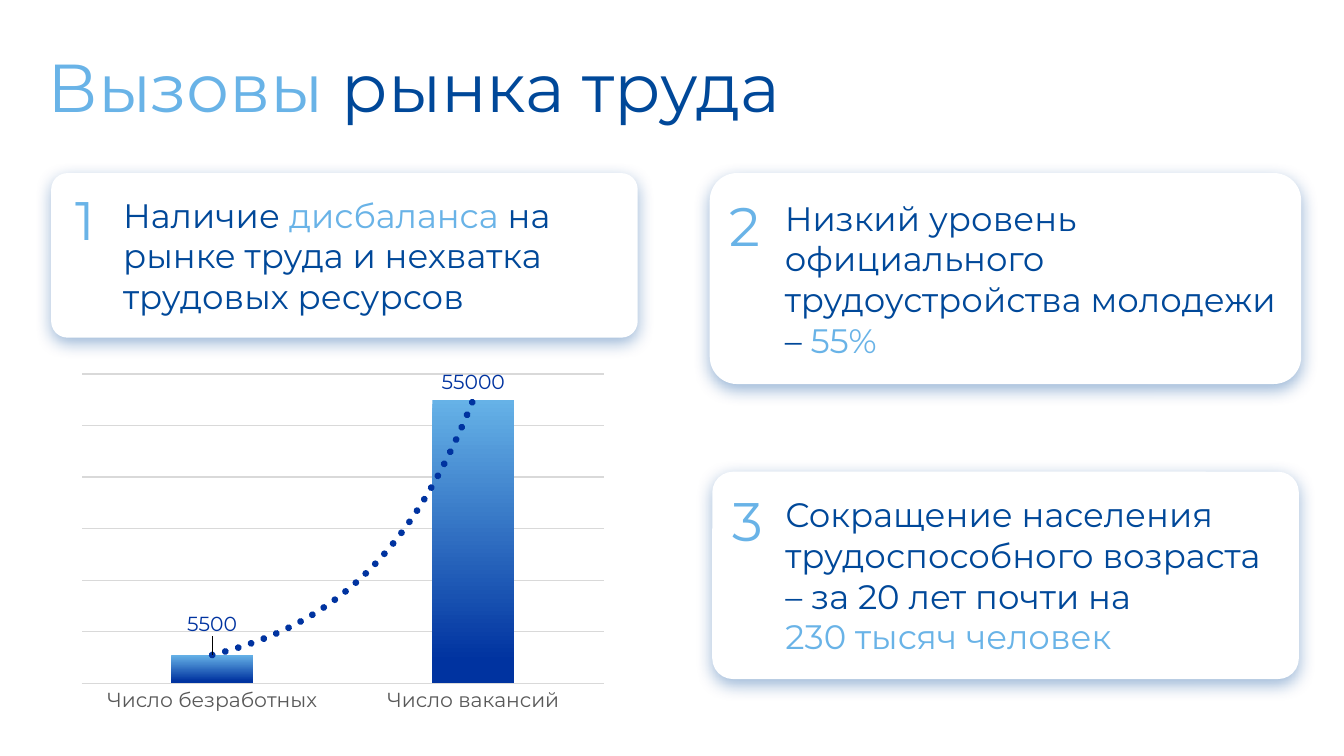
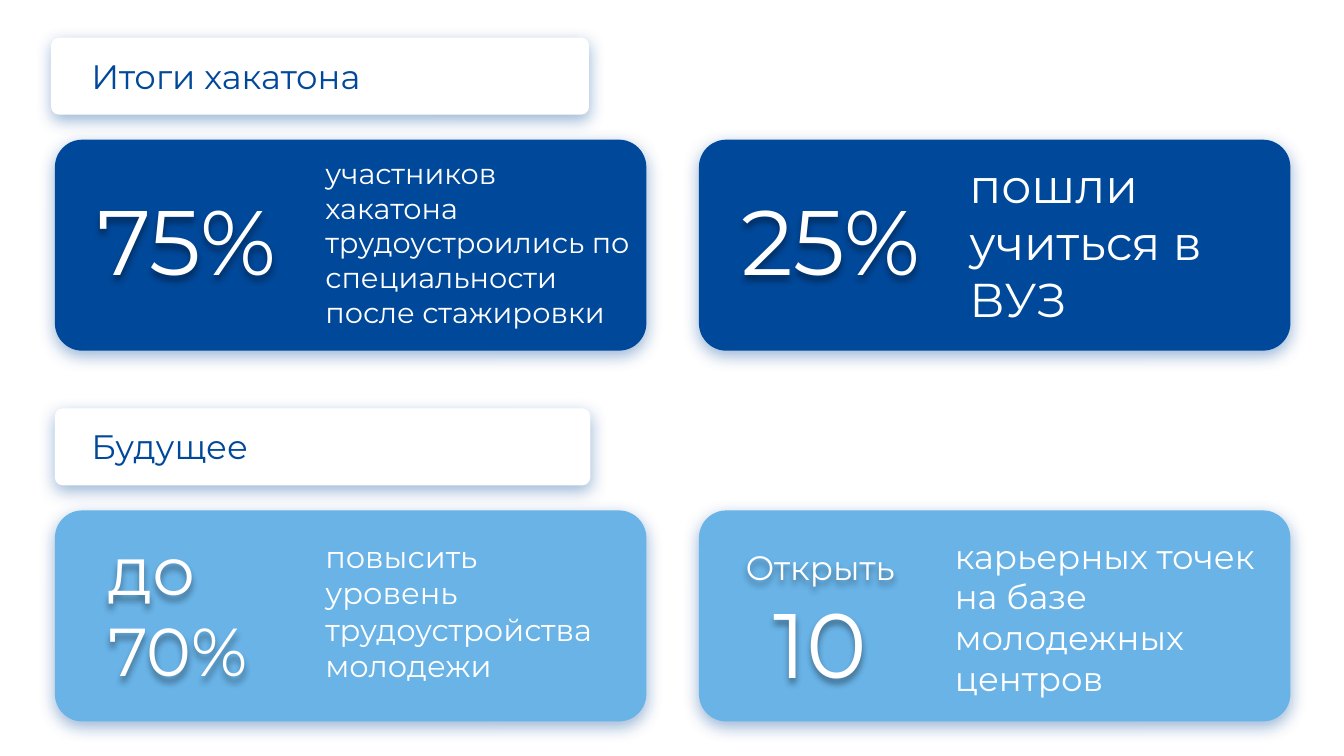
import lxml.etree
import pptx
import pptx.chart.data
import pptx.dml.color
import pptx.enum.chart
import pptx.enum.dml
import pptx.enum.shapes
import pptx.enum.text
import pptx.oxml
import pptx.oxml.ns
import pptx.util

Pt = pptx.util.Pt
qn = pptx.oxml.ns.qn
RGB = pptx.dml.color.RGBColor.from_string
ANCHOR = pptx.enum.text.MSO_ANCHOR
ALIGN = pptx.enum.text.PP_ALIGN
FONT = "Montserrat"
COLOURS = {
    "navy": "004899",
    "sky": "69B3E7",
    "white": "FFFFFF",
    "black": "000000",
    "bar_top": "66B2E7",
    "bar_bottom": "0033A0",
    "grid": "D9D9D9",
    "label": "595959",
}
SHADOW = (
    '<a:outerShdw %s blurRad="%d" dist="%d" dir="5400000" algn="t" rotWithShape="0">'
    '<a:srgbClr val="%s"><a:alpha val="40000"/></a:srgbClr></a:outerShdw>'
)


def add_box(shapes, place, fill=None, radius=0.1, shadow=None):
    lengths = [Pt(value) for value in place]
    if fill:
        kind = pptx.enum.shapes.MSO_SHAPE.ROUNDED_RECTANGLE
        box = shapes.add_shape(kind, *lengths)
        box.adjustments[0] = radius
        box.fill.solid()
        box.fill.fore_color.rgb = RGB(COLOURS[fill])
        box.line.fill.background()
    else:
        box = shapes.add_textbox(*lengths)
    box.shadow.inherit = False
    if shadow:
        blur = Pt(10) if fill else Pt(4)
        xml = SHADOW % (pptx.oxml.ns.nsdecls("a"), blur, Pt(3), COLOURS[shadow])
        effects = box._element.spPr.find(qn("a:effectLst"))
        effects.append(pptx.oxml.parse_xml(xml))
    return box


def write_text(box, paragraphs, size=20, align=ALIGN.LEFT, anchor=ANCHOR.TOP,
               insets=(7.2, 3.6, 7.2, 3.6), wrap=True):
    frame = box.text_frame
    frame.word_wrap = wrap
    frame.vertical_anchor = anchor
    frame.margin_left, frame.margin_top, frame.margin_right, frame.margin_bottom = map(Pt, insets)
    for index, runs in enumerate(paragraphs):
        para = frame.add_paragraph() if index else frame.paragraphs[0]
        para.alignment = align
        for text, colour, *own_size in runs:
            span = para.add_run()
            span.text = text
            span.font.name = FONT
            span.font.size = Pt(own_size[0] if own_size else size)
            span.font.color.rgb = RGB(COLOURS[colour])


deck = pptx.Presentation()
deck.slide_width, deck.slide_height = Pt(793.44), Pt(446.4)
blank = deck.slide_layouts[6]

page = deck.slides.add_slide(blank)
title = add_box(page.shapes, (20.9, 23, 656.6, 55.4))
write_text(title, [[("Вызовы", "sky"), (" рынка труда", "navy")]], size=40)

challenges = [
    ((30.2, 102.2, 346.3, 97.2), 0.1, (37.4, 106.6, 27.4, 47.5),
     [[("Наличие ", "navy"), ("дисбаланса", "sky"),
       (" на рынке труда и нехватка трудовых ресурсов", "navy")]]),
    ((419, 102.2, 349.2, 124.6), 0.13, (423.4, 110.2, 31.7, 47.5),
     [[("Низкий уровень официального трудоустройства молодежи – ", "navy"), ("55%", "sky")]]),
    ((420.5, 278.6, 346.3, 122.4), 0.1, (425.5, 284.4, 33.8, 47.5),
     [[("Сокращение населения трудоспособного возраста – за 20 лет почти на", "navy")],
      [("230 тысяч человек", "sky")]]),
]
for number, (place, radius, number_place, paragraphs) in enumerate(challenges, 1):
    card = add_box(page.shapes, place, fill="white", radius=radius, shadow="navy")
    write_text(card, paragraphs, anchor=ANCHOR.MIDDLE, insets=(39.6, 9.4, 5, 9.4))
    badge = add_box(page.shapes, number_place)
    write_text(badge, [[(str(number), "sky")]], size=32, wrap=False)

jobs = pptx.chart.data.CategoryChartData()
jobs.categories = ["Число безработных", "Число вакансий"]
jobs.add_series("Series 1", (5500, 55000))
chart = page.shapes.add_chart(
    pptx.enum.chart.XL_CHART_TYPE.COLUMN_CLUSTERED,
    Pt(41.8), Pt(216.7), Pt(321.1), Pt(208.1), jobs).chart
chart.has_legend = False
chart.has_title = False
chart.font.name = FONT
chart.font.size = Pt(12)
chart.font.color.rgb = RGB(COLOURS["label"])

values = chart.value_axis
values.minimum_scale, values.maximum_scale, values.major_unit = 0, 60000, 10000
values.visible = False
values.has_major_gridlines = True
names = chart.category_axis
names.major_tick_mark = pptx.enum.chart.XL_TICK_MARK.NONE
for line in (values.major_gridlines.format.line, names.format.line):
    line.color.rgb = RGB(COLOURS["grid"])
    line.width = Pt(0.75)

plot = chart.plots[0]
plot.gap_width, plot.overlap = 219, -27
plot.vary_by_categories = False
series = plot.series[0]
fill = series.format.fill
fill.gradient()
fill.gradient_angle = 270
for stop, position, colour in zip(fill.gradient_stops, (0, 0.92), ("bar_top", "bar_bottom")):
    stop.position = position
    stop.color.rgb = RGB(COLOURS[colour])

labels = series.data_labels
labels.show_value = True
first_label = series.points[0].data_label
for label in (labels, first_label):
    label.position = pptx.enum.chart.XL_LABEL_POSITION.OUTSIDE_END
    label.font.name = FONT
    label.font.size = Pt(12)
    label.font.color.rgb = RGB(COLOURS["bar_bottom"])
label_index = series._element.find(".//" + qn("c:dLbl")).find(qn("c:idx"))
label_index.addnext(pptx.oxml.parse_xml(
    '<c:layout %s><c:manualLayout><c:x val="0"/><c:y val="-0.04"/></c:manualLayout></c:layout>'
    % pptx.oxml.ns.nsdecls("c")))
series._element.find(qn("c:cat")).addprevious(pptx.oxml.parse_xml(
    '<c:trendline %s><c:spPr><a:ln w="%d" cap="rnd"><a:solidFill><a:srgbClr val="%s"/></a:solidFill>'
    '<a:prstDash val="sysDot"/></a:ln></c:spPr><c:trendlineType val="exp"/>'
    '<c:dispRSqr val="0"/><c:dispEq val="0"/></c:trendline>'
    % (pptx.oxml.ns.nsdecls("c", "a"), Pt(4), COLOURS["bar_bottom"])))

page = deck.slides.add_slide(blank)
sections = [
    ("Итоги хакатона", "navy", (30.2, 22.3, 317.5, 45.4), [
        ((50.4, 105.1, 126.7, 72.7), [[("75%", "white", 54)]], ALIGN.LEFT,
         (185, 88.6, 195.8, 110.2), 17, "участников хакатона трудоустроились по специальности после стажировки"),
        ((430.6, 105.1, 123.8, 72), [[("25%", "white", 54)]], ALIGN.LEFT,
         (565.2, 88.6, 195.8, 108.7), 28, "пошли учиться в ВУЗ"),
    ]),
    ("Будущее", "sky", (32.4, 241.2, 316.1, 45.4), [
        ((56.9, 308.2, 100.8, 104.4), [[("до", "white", 40)], [("70%", "white", 40)]], ALIGN.LEFT,
         (185, 313.9, 177.1, 94.3), 18, "повысить уровень трудоустройства молодежи"),
        ((430.6, 319, 107.3, 97.2), [[("Открыть", "white", 20)], [("10", "white", 54)]], ALIGN.CENTER,
         (556.6, 312.5, 195.8, 105), 20, "карьерных точек на базе молодежных центров"),
    ]),
]
for heading, colour, heading_place, results in sections:
    group = page.shapes.add_group_shape().shapes
    top = heading_place[1]
    add_box(group, heading_place, fill="white", shadow="navy")
    heading_box = add_box(group, (46.8, top + 6.9, 195.8, 31.7))
    write_text(heading_box, [[(heading, "navy")]])
    for column, (figure_place, figure, align, note_place, size, note) in enumerate(results):
        card_place = (32.4 + 380.2 * column, top + 60.2, 349.2, 124.6)
        add_box(group, card_place, fill=colour, radius=0.13, shadow="navy")
        write_text(add_box(group, note_place), [[(note, "white")]], size=size)
        figure_box = add_box(group, figure_place, shadow="black")
        write_text(figure_box, figure, align=align, wrap=False)

deck.save("out.pptx")
